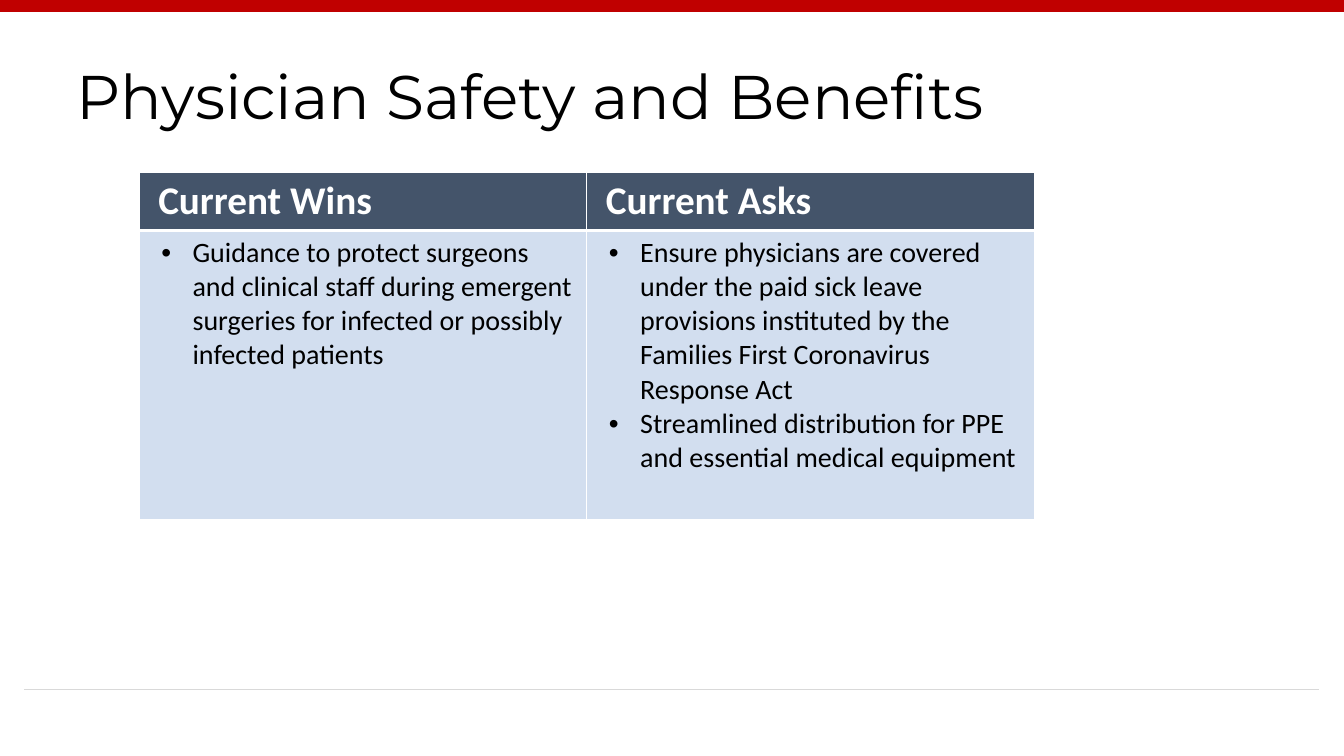
import pptx
import pptx.dml.color
import pptx.enum.shapes
import pptx.enum.text
import pptx.oxml
import pptx.oxml.ns
import pptx.util
from lxml import etree

Inches = pptx.util.Inches
Pt = pptx.util.Pt
qn = pptx.oxml.ns.qn


def color(hex_code):
    return pptx.dml.color.RGBColor.from_string(hex_code)


class SlideBuilder:
    heading_font = "Montserrat"
    body_font = "Calibri"
    black, white = "000000", "FFFFFF"
    red, gray = "C00000", "D9D9D9"
    header_fill, body_fill = "44546A", "D2DEEF"

    def __init__(self, deck):
        self.page = deck.slides.add_slide(deck.slide_layouts[5])

    def span(self, para, text, size, hex_code, font, bold=False):
        run = para.add_run()
        run.text = text
        run.font.size = Pt(size)
        run.font.name = font
        run.font.bold = bold
        run.font.color.rgb = color(hex_code)

    def rule(self, left, right, top, hex_code, width):
        """Draw a horizontal line across the page."""
        line = self.page.shapes.add_connector(
            pptx.enum.shapes.MSO_CONNECTOR.STRAIGHT,
            Inches(left), Inches(top), Inches(right), Inches(top))
        line.line.color.rgb = color(hex_code)
        line.line.width = Pt(width)
        etree.SubElement(line.element.spPr, qn("a:effectLst"))

    def title(self, text, left, top, width, height):
        box = self.page.shapes.title
        box.left, box.top = Inches(left), Inches(top)
        box.width, box.height = Inches(width), Inches(height)
        frame = box.text_frame
        frame.word_wrap = True
        frame.vertical_anchor = pptx.enum.text.MSO_ANCHOR.MIDDLE
        para = frame.paragraphs[0]
        para.alignment = pptx.enum.text.PP_ALIGN.LEFT
        para.line_spacing = 0.9
        self.span(para, text, 44, self.black, self.heading_font)

    def borders(self, cell, top, bottom):
        """Give a cell white borders, 1 pt at the sides."""
        properties = cell._tc.get_or_add_tcPr()
        for side, width in (("L", 1), ("R", 1), ("T", top), ("B", bottom)):
            line = etree.SubElement(properties, qn(f"a:ln{side}"), w=str(Pt(width)))
            fill = etree.SubElement(line, qn("a:solidFill"))
            etree.SubElement(fill, qn("a:srgbClr"), val=self.white)

    def bullet(self, para):
        properties = para._p.get_or_add_pPr()
        properties.set("marL", str(Inches(0.43)))
        properties.set("indent", str(Inches(-0.31)))
        etree.SubElement(properties, qn("a:buFont"), typeface="Arial")
        etree.SubElement(properties, qn("a:buChar"), char="•")

    def table(self, columns, left, top, column_width, row_heights):
        """Draw one column per heading, with its bullets below."""
        grid = self.page.shapes.add_table(
            len(row_heights), len(columns), Inches(left), Inches(top),
            Inches(column_width * len(columns)), Inches(sum(row_heights))).table
        for row, height in zip(grid.rows, row_heights):
            row.height = Inches(height)
        for index, (heading, items) in enumerate(columns.items()):
            grid.columns[index].width = Inches(column_width)
            header, body = grid.cell(0, index), grid.cell(1, index)
            for cell, fill, edges in ((header, self.header_fill, (1, 3)),
                                      (body, self.body_fill, (3, 1))):
                self.borders(cell, *edges)
                cell.fill.solid()
                cell.fill.fore_color.rgb = color(fill)
            header.margin_left = Inches(0.19)
            self.span(header.text_frame.paragraphs[0], heading, 28,
                      self.white, self.body_font, bold=True)
            frame = body.text_frame
            for number, item in enumerate(items):
                para = frame.add_paragraph() if number else frame.paragraphs[0]
                self.bullet(para)
                self.span(para, item, 20, self.black, self.body_font)


def main():
    deck = pptx.Presentation()
    deck.slide_width, deck.slide_height = Inches(13.33), Inches(7.5)
    slide = SlideBuilder(deck)
    slide.rule(0, 13.33, 0.06, slide.red, 9)
    slide.rule(0.24, 13.08, 6.84, slide.gray, 0.5)
    slide.title("Physician Safety and Benefits", 0.66, 0.26, 11.5, 1.45)
    slide.table({
        "Current Wins": [
            "Guidance to protect surgeons and clinical staff during emergent "
            "surgeries for infected or possibly infected patients",
        ],
        "Current Asks": [
            "Ensure physicians are covered under the paid sick leave provisions "
            "instituted by the Families First Coronavirus Response Act",
            "Streamlined distribution for PPE and essential medical equipment",
        ],
    }, 1.38, 1.71, 4.44, (0.56, 2.87))
    deck.save("out.pptx")


if __name__ == "__main__":
    main()
